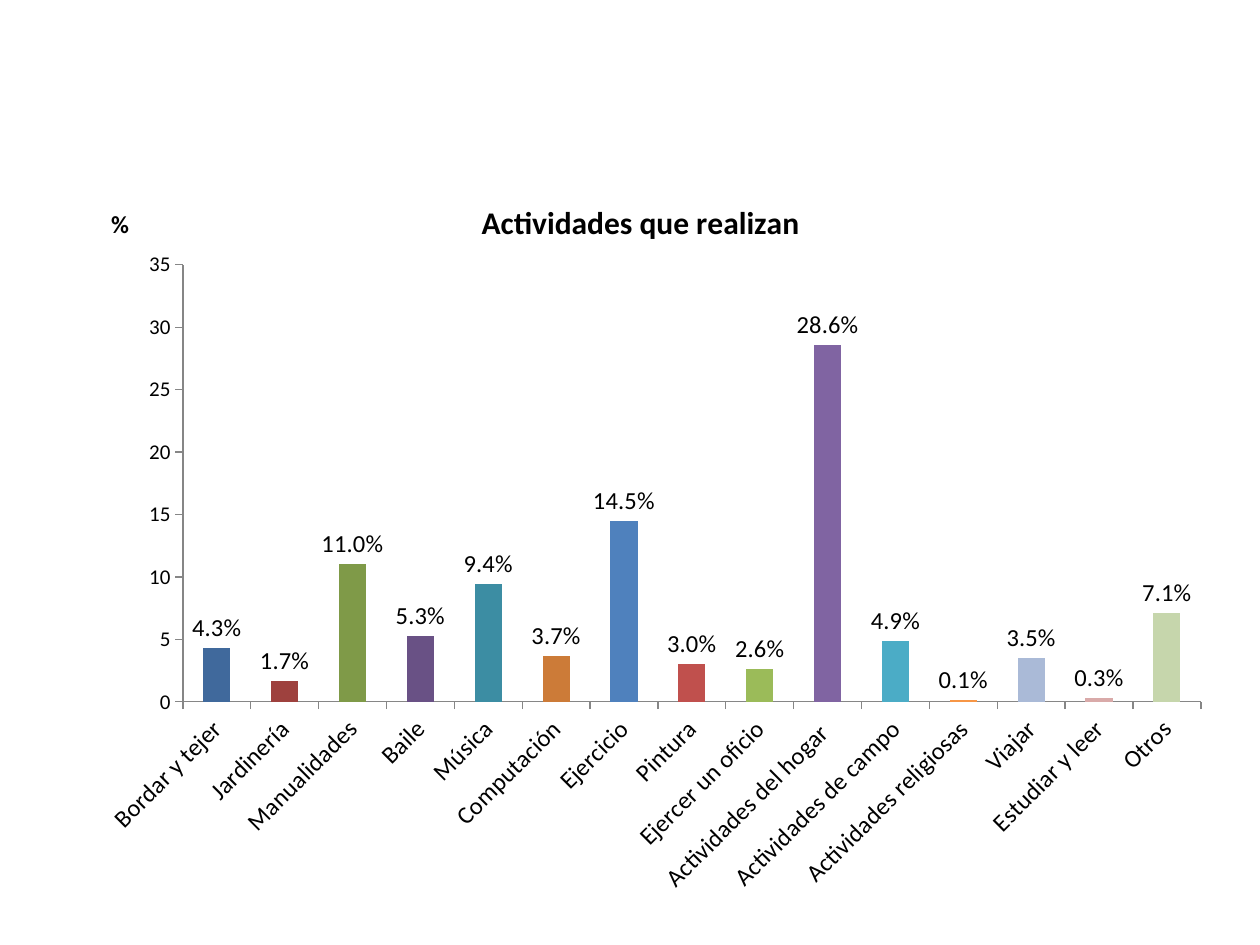
"""Build a slide with a column chart of the activities people carry out."""
import pptx
import pptx.chart.data
import pptx.dml.color
import pptx.enum.chart
import pptx.oxml
import pptx.oxml.ns
import pptx.util
from pptx.dml.color import RGBColor
from pptx.util import Inches

BLACK = RGBColor(0x00, 0x00, 0x00)
AXIS_GRAY = RGBColor(0x86, 0x86, 0x86)
COLUMN_COLORS = [RGBColor.from_string(code) for code in (
    "40699C", "9E413E", "7F9A48", "695185", "3C8DA3", "CC7B38",
    "4F81BD", "C0504D", "9BBB59", "8064A2", "4BACC6", "F79646",
    "AABAD7", "D9AAA9", "C6D6AC")]
ACTIVITIES = {
    "Bordar y tejer": 4.3, "Jardinería": 1.7, "Manualidades": 11,
    "Baile": 5.3, "Música": 9.4, "Computación": 3.7, "Ejercicio": 14.5,
    "Pintura": 3, "Ejercer un oficio": 2.6, "Actividades del hogar ": 28.6,
    "Actividades de campo": 4.9, "Actividades religiosas": 0.1,
    "Viajar": 3.5, "Estudiar y leer": 0.3, "Otros": 7.1,
}


def make_layout(target="", **fractions):
    modes = "".join(f'<c:{side}Mode val="edge"/>' for side in "xy")
    values = "".join(f'<c:{name} val="{value}"/>' for name, value in fractions.items())
    return pptx.oxml.parse_xml(
        f'<c:layout {pptx.oxml.ns.nsdecls("c")}><c:manualLayout>'
        f"{target}{modes}{values}</c:manualLayout></c:layout>")


def set_title(title, text, size, x, y):
    paragraph = title.text_frame.paragraphs[0]
    paragraph.text = text
    paragraph.font.size = pptx.util.Pt(size)
    paragraph.font.bold = True
    paragraph.font.color.rgb = BLACK
    for old_layout in title.element.xpath("c:layout"):
        title.element.remove(old_layout)
    title.element.xpath("c:tx")[0].addnext(make_layout(x=x, y=y))


presentation = pptx.Presentation()
presentation.slide_width = Inches(10)
presentation.slide_height = Inches(7.5)
slide = presentation.slides.add_slide(presentation.slide_layouts[6])

chart_data = pptx.chart.data.CategoryChartData(number_format="0.0")
chart_data.categories = list(ACTIVITIES)
chart_data.add_series("Series 1", list(ACTIVITIES.values()))
chart = slide.shapes.add_chart(
    pptx.enum.chart.XL_CHART_TYPE.COLUMN_CLUSTERED,
    Inches(0.28), Inches(1.31), Inches(9.45), Inches(5.91), chart_data).chart
chart.has_legend = False
chart.font.name = "Calibri"
chart.font.size = pptx.util.Pt(10)
chart.font.color.rgb = BLACK
set_title(chart.chart_title, "Actividades que realizan", 18, 0.37, 0.04)

plot = chart.plots[0]
plot.gap_width = 150
plot.vary_by_categories = False
for index, color in enumerate(COLUMN_COLORS):
    fill = plot.series[0].points[index].format.fill
    fill.solid()
    fill.fore_color.rgb = color

plot.has_data_labels = True
labels = plot.data_labels
labels.show_value = True
labels.number_format = '0.0"%"'
labels.number_format_is_linked = False
labels.position = pptx.enum.chart.XL_LABEL_POSITION.OUTSIDE_END
labels.font.size = pptx.util.Pt(14)

category_axis, value_axis = chart.category_axis, chart.value_axis
for axis, size in ((category_axis, 14), (value_axis, 12)):
    axis.has_major_gridlines = False
    axis.major_tick_mark = pptx.enum.chart.XL_TICK_MARK.OUTSIDE
    axis.format.line.color.rgb = AXIS_GRAY
    axis.format.line.width = pptx.util.Pt(0.75)
    axis.tick_labels.font.size = pptx.util.Pt(size)
value_axis.minimum_scale = 0
value_axis.maximum_scale = 35
value_axis.major_unit = 5
value_axis.tick_labels.number_format = "0"
value_axis.tick_labels.number_format_is_linked = False
set_title(value_axis.axis_title, "%", 14, 0.06, 0.05)

for location, rotation in (("c:catAx/c:txPr", -45), ("c:valAx/c:title/c:tx/c:rich", 0)):
    body = chart.element.xpath(f".//{location}/a:bodyPr")[0]
    body.set("rot", str(rotation * 60000))
    body.set("vert", "horz")

plot_area = chart.element.xpath(".//c:plotArea")[0]
for old_layout in plot_area.xpath("c:layout"):
    plot_area.remove(old_layout)
plot_area.insert(0, make_layout(
    '<c:layoutTarget val="inner"/>', x=0.124, y=0.134, w=0.855, h=0.587))

presentation.save("out.pptx")
